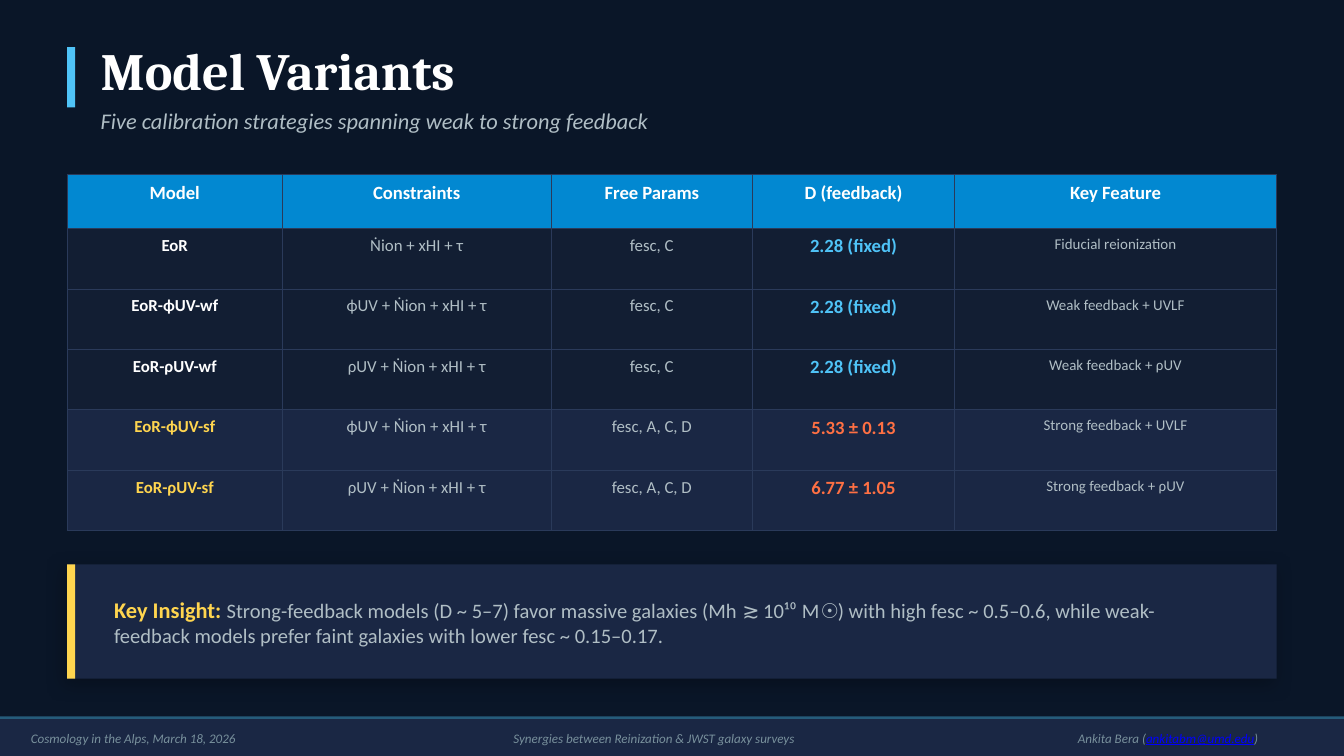
from lxml.etree import SubElement
from pptx import Presentation
from pptx.dml.color import RGBColor
from pptx.enum.shapes import MSO_SHAPE
from pptx.enum.text import MSO_ANCHOR, PP_ALIGN
from pptx.oxml import parse_xml
from pptx.oxml.ns import nsdecls, qn
from pptx.util import Pt

HUES = {
    "night": "0A1628", "panel": "1A2744", "row": "121E33", "head": "0288D1",
    "edge": "2A3A5A", "sky": "4FC3F7", "gold": "FFD54F", "coral": "FF7043",
    "white": "FFFFFF", "mist": "B0BEC5", "slate": "78909C", "link": "0000FF",
}
RGB = {name: RGBColor.from_string(code) for name, code in HUES.items()}


def block(left, top, width, height, hue):
    shape = slide.shapes.add_shape(
        MSO_SHAPE.RECTANGLE, Pt(left), Pt(top), Pt(width), Pt(height))
    shape.shadow.inherit = False
    shape.fill.solid()
    shape.fill.fore_color.rgb = RGB[hue]
    shape.line.fill.background()
    return shape


def write(frame, inset, runs, align=PP_ALIGN.LEFT):
    frame.word_wrap = True
    frame.margin_left = frame.margin_right = Pt(inset)
    frame.margin_top = frame.margin_bottom = Pt(inset)
    para = frame.paragraphs[0]
    para.alignment = align
    for text, size, hue, style in runs:
        run = para.add_run()
        run.text = text
        font = run.font
        font.name = "Cambria" if size == 28 else "Calibri"
        font.size = Pt(size)
        font.color.rgb = RGB[hue]
        font.bold = "b" in style
        font.italic = "i" in style
        font.underline = "u" in style


deck = Presentation()
deck.slide_width, deck.slide_height = Pt(720), Pt(405)
slide = deck.slides.add_slide(deck.slide_layouts[6])
slide.background.fill.solid()
slide.background.fill.fore_color.rgb = RGB["night"]

block(0, 385.2, 720, 19.8, "panel")
rule = block(0, 383.76, 720, 1.44, "sky")
tint = rule.fill._xPr.find(qn("a:solidFill"))[0]
SubElement(tint, qn("a:alpha")).set("val", "40000")
block(36, 25.2, 4.32, 32.4, "sky")

grid = slide.shapes.add_table(6, 5, Pt(36), Pt(93.6), Pt(648), Pt(190.8)).table
grid.first_row = grid.horz_banding = False
for col, width in zip(grid.columns, [115.2, 144, 108, 108, 172.8]):
    col.width = Pt(width)
for row, height in zip(grid.rows, [28.8] + [32.4] * 5):
    row.height = Pt(height)

weak = ("fesc, C", "2.28 (fixed)")
rows = [
    ("Model", "Constraints", "Free Params", "D (feedback)", "Key Feature"),
    ("EoR", "Ṅion + xHI + τ", *weak, "Fiducial reionization"),
    ("EoR-ϕUV-wf", "ϕUV + Ṅion + xHI + τ", *weak, "Weak feedback + UVLF"),
    ("EoR-ρUV-wf", "ρUV + Ṅion + xHI + τ", *weak, "Weak feedback + ρUV"),
    ("EoR-ϕUV-sf", "ϕUV + Ṅion + xHI + τ", "fesc, A, C, D", "5.33 ± 0.13",
     "Strong feedback + UVLF"),
    ("EoR-ρUV-sf", "ρUV + Ṅion + xHI + τ", "fesc, A, C, D", "6.77 ± 1.05",
     "Strong feedback + ρUV"),
]
sizes = [9, 9, 9, 10, 8]
for r, row in enumerate(rows):
    strong = r > 3
    hues = ["gold" if strong else "white", "mist", "mist",
            "coral" if strong else "sky", "mist"]
    for c, text in enumerate(row):
        cell = grid.cell(r, c)
        if r == 0:
            run, fill = (text, 10, "white", "b"), "head"
        else:
            run = (text, sizes[c], hues[c], "b" if c in (0, 3) else "")
            fill = "panel" if strong else "row"
        write(cell.text_frame, 3.6, [run], PP_ALIGN.CENTER)
        cell.margin_left = cell.margin_right = Pt(3.6)
        cell.margin_top = cell.margin_bottom = Pt(3.6)
        props = cell._tc.get_or_add_tcPr()
        for side in "LRTB":
            props.append(parse_xml(
                f'<a:ln{side} {nsdecls("a")} w="6350"><a:solidFill>'
                f'<a:srgbClr val="{HUES["edge"]}"/></a:solidFill></a:ln{side}>'))
        cell.fill.solid()
        cell.fill.fore_color.rgb = RGB[fill]

card = block(36, 302.4, 648, 61.2, "panel")
card._element.spPr.find(qn("a:effectLst")).append(parse_xml(
    f'<a:outerShdw {nsdecls("a")} blurRad="127000" dist="38100" dir="8100000">'
    '<a:srgbClr val="000000"><a:alpha val="25000"/></a:srgbClr></a:outerShdw>'))
block(36, 302.4, 4.32, 61.2, "gold")

notes = [
    (54, 21.6, 612, 31.68, 0, [("Model Variants", 28, "white", "b")]),
    (54, 58.32, 612, 12.24, 0,
     [("Five calibration strategies spanning weak to strong feedback",
       12, "mist", "i")]),
    (57.6, 314.64, 604.8, 36.72, 3.6,
     [("Key Insight: ", 12, "gold", "b"),
      ("Strong-feedback models (D ~ 5–7) favor massive galaxies "
       "(Mh ≳ 10¹⁰ M☉) with high fesc ~ 0.5–0.6, while weak-feedback models "
       "prefer faint galaxies with lower fesc ~ 0.15–0.17.", 11, "mist", "")]),
    (573.84, 388.08, 113.76, 14.4, 3.6,
     [("Ankita Bera (", 7, "slate", "i"),
      ("ankitabm@umd.edu", 7, "link", "iu"), (")", 7, "slate", "i")]),
    (12.96, 388.08, 176.4, 14.4, 3.6,
     [("Cosmology in the Alps, March 18, 2026", 7, "slate", "i")]),
    (271.44, 388.08, 176.4, 14.4, 3.6,
     [("Synergies between Reinization & JWST galaxy surveys", 7, "slate", "i")]),
]
for left, top, width, height, inset, runs in notes:
    frame = slide.shapes.add_textbox(
        Pt(left), Pt(top), Pt(width), Pt(height)).text_frame
    frame.vertical_anchor = MSO_ANCHOR.MIDDLE
    write(frame, inset, runs)

deck.save("out.pptx")
